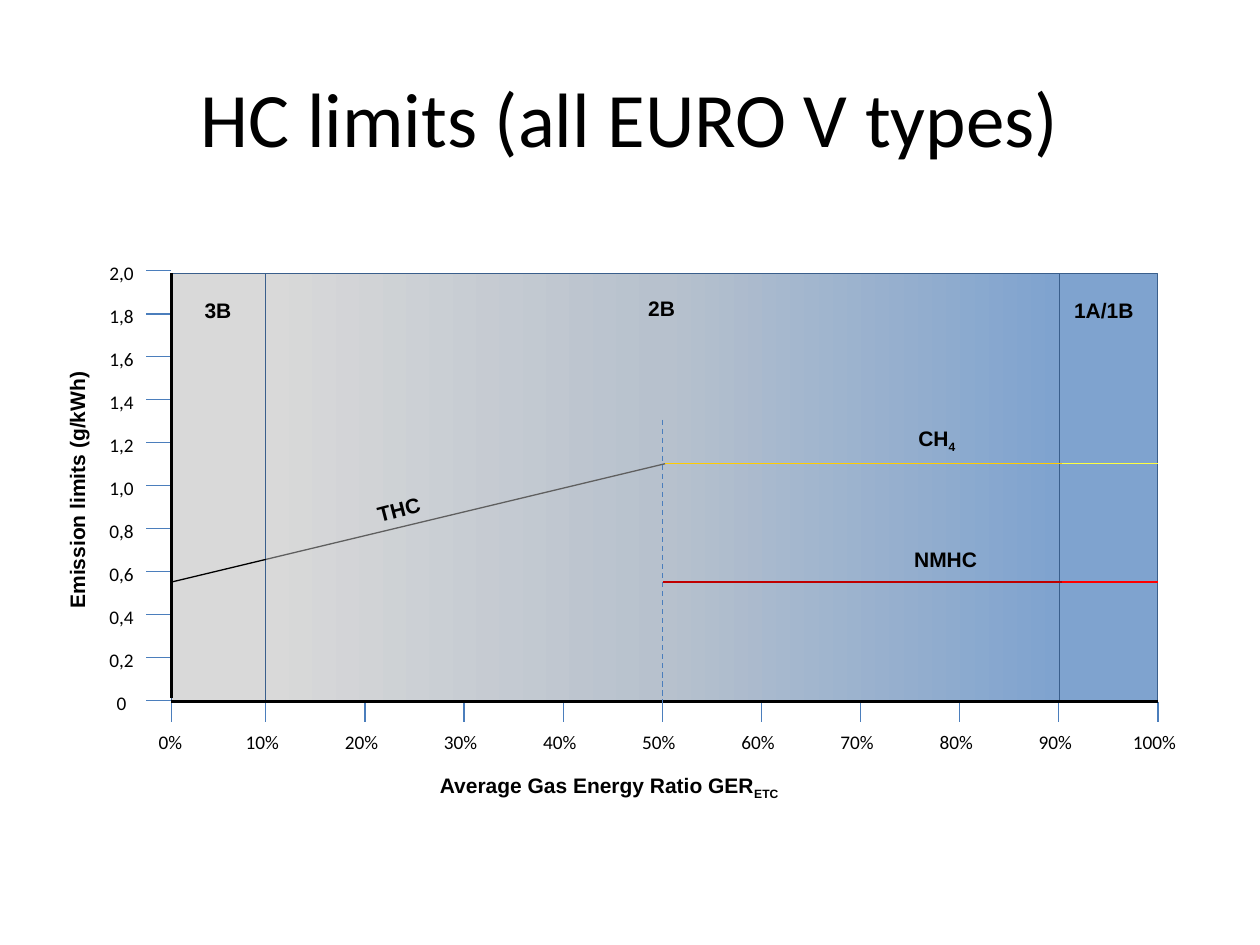
from pptx import Presentation
from pptx.dml.color import RGBColor
from pptx.enum.dml import MSO_LINE
from pptx.enum.shapes import MSO_CONNECTOR, MSO_SHAPE
from pptx.enum.text import MSO_ANCHOR, PP_ALIGN
from pptx.oxml.ns import qn
from pptx.util import Inches, Pt
from lxml import etree

prs = Presentation()
prs.slide_width, prs.slide_height = Inches(10), Inches(7.5)
s = prs.slides.add_slide(prs.slide_layouts[6])
rgb = RGBColor.from_string


def add_line(x1, y1, x2, y2, color, width=0.75):
    c = s.shapes.add_connector(MSO_CONNECTOR.STRAIGHT, Inches(x1), Inches(y1), Inches(x2), Inches(y2))
    c.line.color.rgb = rgb(color)
    c.line.width = Pt(width)
    etree.SubElement(c._element.spPr, qn("a:effectLst"))
    return c


def add_text(x, y, w, h, text, size=12, font="Arial", bold=True, sub="",
             align=PP_ALIGN.CENTER, anchor=MSO_ANCHOR.TOP, inset=(0.1, 0.1), wrap=False):
    sp = s.shapes.add_textbox(Inches(x), Inches(y), Inches(w), Inches(h))
    tf = sp.text_frame
    tf.word_wrap = wrap
    tf.vertical_anchor = anchor
    tf.margin_left, tf.margin_right = map(Inches, inset)
    p = tf.paragraphs[0]
    p.text = text
    p.alignment = align
    if sub:
        r = p.add_run()
        r.text = sub
        r.font._element.set("baseline", "-25000")
    for r in p.runs:
        r.font.size, r.font.name, r.font.bold = Pt(size), font, bold
        r.font.color.rgb = rgb("000000")
    return sp


# Title
add_text(0.5, 0.3, 9, 1.25, "HC limits (all EURO V types)", 44, "Calibri", False,
         anchor=MSO_ANCHOR.MIDDLE, wrap=True)

# Plot edges and zone borders
left, right, top, bottom = 1.36, 9.19, 2.17, 5.57
low, mid, high = 2.11, 5.26, 8.41
tick = "4B7EBC"

# X axis ticks: first step is narrower, the rest are equal
for i in range(11):
    x = left if i == 0 else low + (i - 1) * (right - low) / 9
    add_line(x, bottom, x, 5.73, tick)
    indent = {0: 0.1, 10: 0}.get(i, 0.04)
    add_text(x - 0.2, 5.74, 0.39, 0.29, f"{i * 10}%", 11, "Calibri", False,
             align=PP_ALIGN.LEFT, anchor=MSO_ANCHOR.MIDDLE, inset=(indent, 0), wrap=True)

# Y axis ticks
for i in range(11):
    y = 5.56 - i * 0.341
    add_line(1.16, y, left, y, tick)
    label = f"{i * 0.2:.1f}".replace(".", ",") if i else "0"
    add_text(0.77, y - 0.13, 0.39, 0.29, label, 11, "Calibri", False,
             anchor=MSO_ANCHOR.MIDDLE, inset=(0.04, 0.04), wrap=True)

# Axis titles
add_text(3.31, 6.08, 3.05, 0.3, "Average Gas Energy Ratio GER", sub="ETC")
add_text(-0.44, 3.74, 2.1, 0.3, "Emission limits (g/kWh)").rotation = 270

# Zones, the middle one blending between its neighbours
for x1, x2, colors in [(left, low, ["D9D9D9"]),
                       (low, high, ["D9D9D9", "B7C1CD", "7FA3CF"]),
                       (high, right, ["7FA3CF"])]:
    sp = s.shapes.add_shape(MSO_SHAPE.RECTANGLE, Inches(x1), Inches(top),
                            Inches(x2 - x1), Inches(bottom - top))
    sp.shadow.inherit = False
    sp.line.color.rgb = rgb("3A5F8C")
    sp.line.width = Pt(0.5)
    if len(colors) == 1:
        sp.fill.solid()
        sp.fill.fore_color.rgb = rgb(colors[0])
        continue
    sp.fill.gradient()
    sp.fill.gradient_angle = 0
    stops = sp._element.spPr.find(qn("a:gradFill")).find(qn("a:gsLst"))
    for gs in list(stops):
        stops.remove(gs)
    for i, color in enumerate(colors):
        gs = etree.SubElement(stops, qn("a:gs"), pos=str(i * 50000))
        etree.SubElement(gs, qn("a:srgbClr"), val=color)

# Axes
add_line(left, top, left, 5.54, "000000", 1.5)
add_line(right, bottom, left, bottom, "000000", 1.5)

# Zone labels
for x, y, w, text in [(1.52, 2.31, 0.42, "3B"), (5.04, 2.3, 0.42, "2B"), (8.42, 2.31, 0.68, "1A/1B")]:
    add_text(x, y, w, 0.3, text)

# Limit lines
nmhc, ch4 = 4.62, 3.68
add_line(high, nmhc, right, nmhc, "FF0000")
add_line(high, ch4, right, ch4, "FFFF3F")
add_line(low, 4.44, 5.28, ch4, "5F5F5F")
add_line(left, nmhc, low, 4.44, "000000")
add_line(5.28, ch4, 8.43, ch4, "FFCC00")
add_line(mid, nmhc, 8.43, nmhc, "C00000")

# Limit labels
add_text(7.18, 3.33, 0.51, 0.3, "CH", sub="4")
add_text(7.15, 4.29, 0.71, 0.3, "NMHC")
add_text(2.89, 3.89, 0.55, 0.3, "THC").rotation = 345.6

# 50% divider
add_line(mid, 3.33, mid, 5.59, tick).line.dash_style = MSO_LINE.DASH

prs.save("out.pptx")
